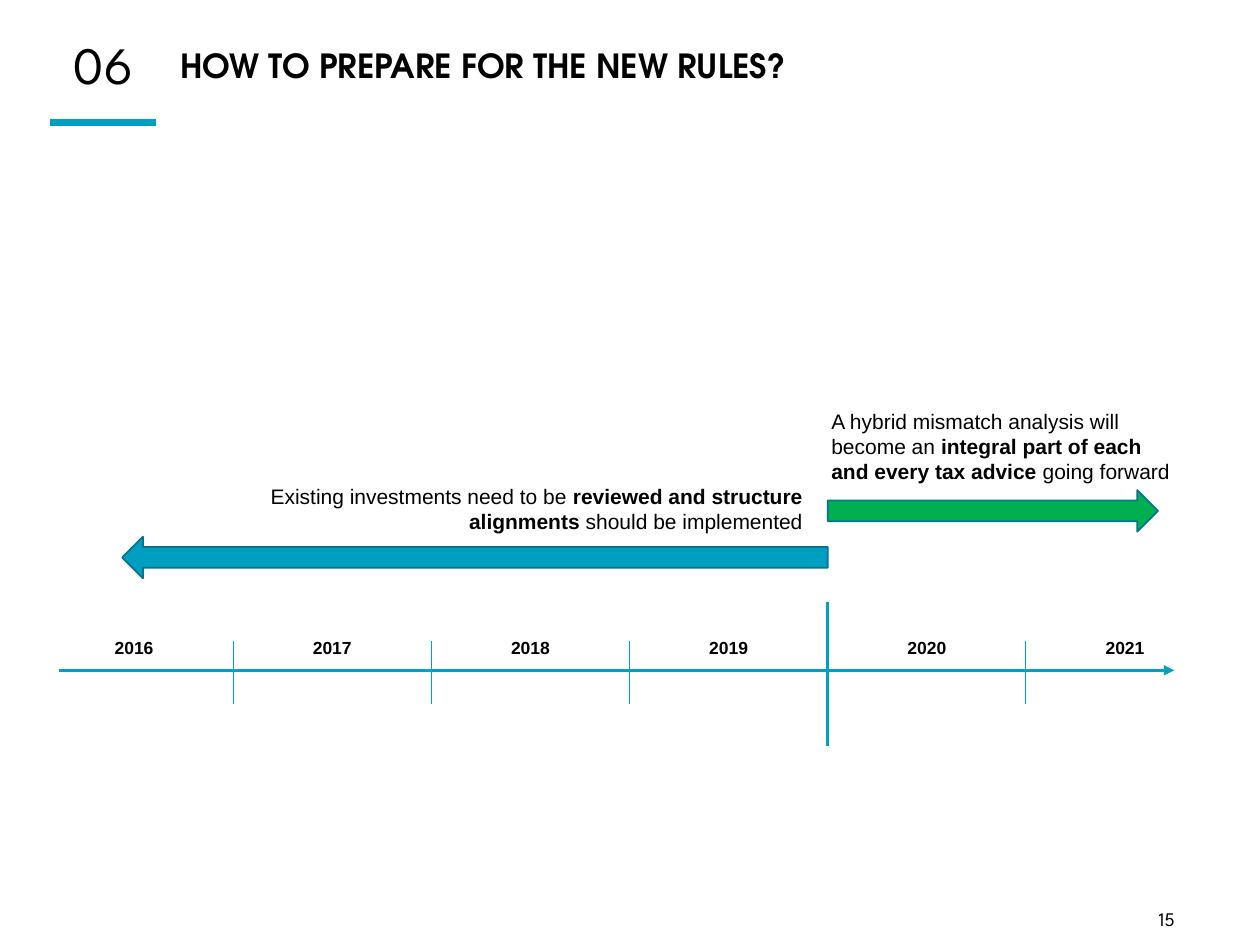
from lxml.etree import SubElement
from pptx import Presentation
from pptx.dml.color import RGBColor
from pptx.enum.shapes import MSO_CONNECTOR as Connector, MSO_SHAPE as Shape
from pptx.enum.text import MSO_ANCHOR as Anchor, MSO_AUTO_SIZE as AutoSize, PP_ALIGN as Align
from pptx.oxml.ns import qn
from pptx.util import Inches, Pt

COLORS = {"text": "000000", "accent": "009EC0", "outline": "00758E", "future": "00B050"}
SECTION = "06"
TITLE = "HOW TO PREPARE FOR THE NEW RULES?"
PAGE = "15"
YEARS = ["2016", "2017", "2018", "2019", "2020", "2021"]
START_YEAR = "2020"
PHASES = [
    {
        "note": [("Existing investments need to be ", False),
                 ("reviewed and structure alignments ", True),
                 ("should be implemented", False)],
        "note_box": (1.63, 3.79, 4.84, 0.5), "align": Align.RIGHT,
        "arrow": Shape.LEFT_ARROW, "arrow_box": (0.97, 4.26, 5.6, 0.33), "fill": "accent",
    },
    {
        "note": [("A hybrid mismatch analysis will become an ", False),
                 ("integral part of each and every tax advice ", True),
                 ("going forward", False)],
        "note_box": (6.5, 3.19, 2.9, 0.71), "align": Align.LEFT,
        "arrow": Shape.RIGHT_ARROW, "arrow_box": (6.57, 3.89, 2.62, 0.33), "fill": "future",
    },
]
AXIS_Y, AXIS_START, AXIS_END = 5.32, 0.47, 9.32
FIRST_DIVIDER, YEAR_WIDTH = 1.85, 1.573
LABEL_WIDTH, LABEL_HEIGHT = 0.62, 0.27


def color(name):
    return RGBColor.from_string(COLORS[name])


def box(values):
    return [Inches(value) for value in values]


def style(paragraph, size, font="Arial", bold=None, align=Align.LEFT):
    paragraph.alignment = align
    paragraph.font.size = Pt(size)
    paragraph.font.name = font
    paragraph.font.bold = bold
    paragraph.font.color.rgb = color("text")


def add_text(slide, place, runs, size, font="Arial", bold=None, align=Align.LEFT):
    frame = slide.shapes.add_textbox(*box(place)).text_frame
    frame.word_wrap = True
    paragraph = frame.paragraphs[0]
    for words, strong in runs:
        run = paragraph.add_run()
        run.text = words
        if strong:
            run.font.bold = True
    style(paragraph, size, font, bold, align)


def fill_heading(holder, place, words, size, font, bold, align):
    holder.left, holder.top, holder.width, holder.height = box(place)
    frame = holder.text_frame
    frame.text = words
    frame.auto_size = AutoSize.NONE
    frame.vertical_anchor = Anchor.MIDDLE
    paragraph = frame.paragraphs[0]
    paragraph.line_spacing = 0.9
    paragraph.space_before = Pt(0)
    properties = paragraph._p.get_or_add_pPr()
    properties.set("marL", "0")
    properties.set("indent", "0")
    SubElement(properties, qn("a:buNone"))
    style(paragraph, size, font, bold, align)


def add_line(slide, ends, width, arrow=False):
    line = slide.shapes.add_connector(Connector.STRAIGHT, *box(ends))
    line.line.color.rgb = color("accent")
    line.line.width = Pt(width)
    if arrow:
        SubElement(line.line._get_or_add_ln(), qn("a:tailEnd"), type="triangle")
    SubElement(line._element.spPr, qn("a:effectLst"))


def add_heading(slide):
    add_line(slide, (0.4, 0.97, 1.24, 0.97), 4)
    fill_heading(slide.placeholders[1], (0.47, 0.27, 0.7, 0.53), SECTION,
                 30, "League Spartan", False, Align.CENTER)
    fill_heading(slide.shapes.title, (1.33, 0.27, 8.34, 0.53), TITLE,
                 19, "TeX Gyre Adventor", True, Align.LEFT)


def add_timeline(slide):
    add_line(slide, (AXIS_START, AXIS_Y, AXIS_END, AXIS_Y), 1.5, arrow=True)
    for index, year in enumerate(YEARS):
        divider = FIRST_DIVIDER + (index - 1) * YEAR_WIDTH
        label_left = divider + (YEAR_WIDTH - LABEL_WIDTH) / 2
        add_text(slide, (label_left, 5.01, LABEL_WIDTH, LABEL_HEIGHT), [(year, False)],
                 10, bold=True, align=Align.CENTER)
        if year == START_YEAR:
            add_line(slide, (divider, 4.78, divider, 5.92), 1.5)
        elif index:
            add_line(slide, (divider, 5.09, divider, 5.59), 0.5)


def add_phase(slide, phase):
    arrow = slide.shapes.add_shape(phase["arrow"], *box(phase["arrow_box"]))
    arrow.shadow.inherit = False
    arrow.fill.solid()
    arrow.fill.fore_color.rgb = color(phase["fill"])
    arrow.line.color.rgb = color("outline")
    arrow.line.width = Pt(1)
    add_text(slide, phase["note_box"], phase["note"], 12, align=phase["align"])


def main():
    deck = Presentation()
    deck.slide_width, deck.slide_height = Inches(10), Inches(7.5)
    slide = deck.slides.add_slide(deck.slide_layouts[1])
    add_heading(slide)
    add_timeline(slide)
    for phase in PHASES:
        add_phase(slide, phase)
    add_text(slide, (8.96, 7.15, 0.6, 0.29), [(PAGE, False)], 11,
             "League Spartan", align=Align.CENTER)
    deck.save("out.pptx")


if __name__ == "__main__":
    main()
